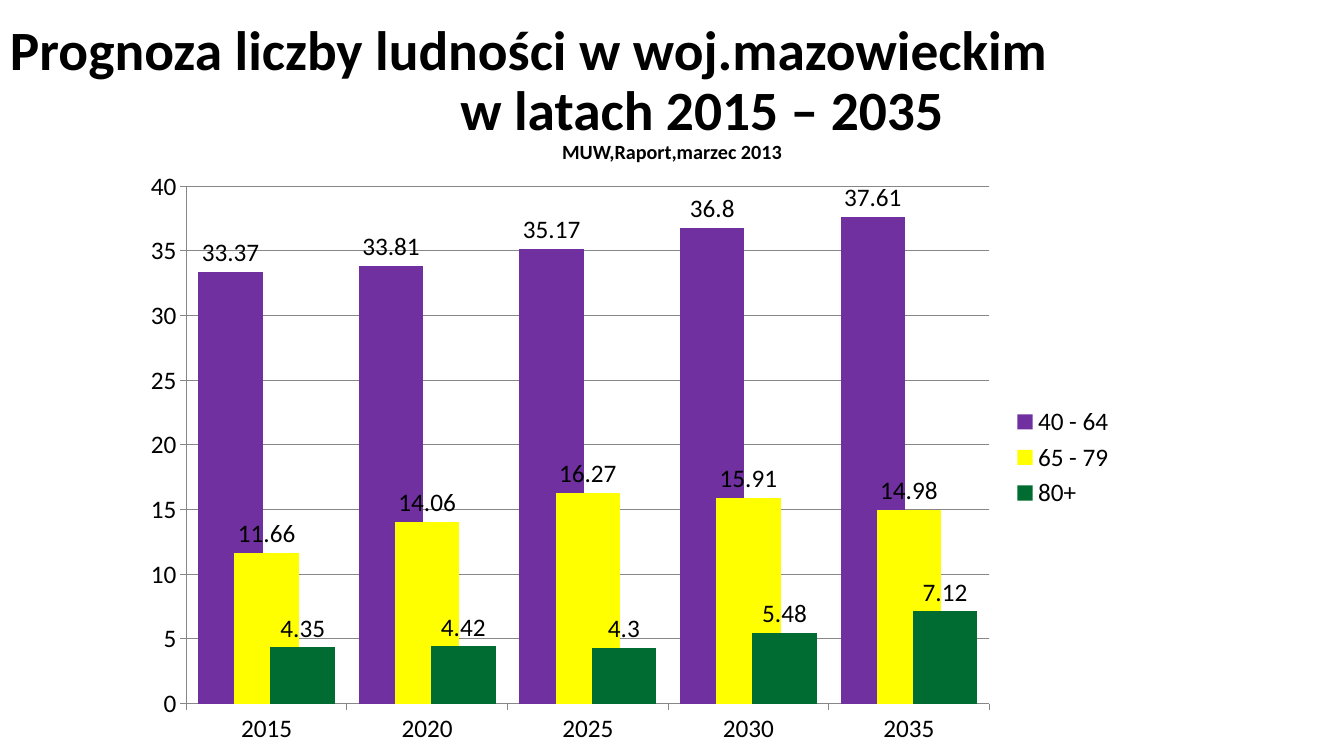
from pptx import Presentation
from pptx.chart.data import CategoryChartData
from pptx.dml.color import RGBColor
from pptx.enum.chart import XL_CHART_TYPE, XL_LABEL_POSITION, XL_LEGEND_POSITION, XL_TICK_MARK
from pptx.enum.text import MSO_ANCHOR, PP_ALIGN
from pptx.util import Pt

PX = 914400 / 100.8
FONT = "Calibri"
COLORS = {
    "text": "000000",
    "grid": "878787",
    "40 - 64": "7030A0",
    "65 - 79": "FFFF00",
    "80+": "006C31",
}


def px(length):
    return round(length * PX)


def color(name):
    return RGBColor.from_string(COLORS[name])


deck = Presentation()
deck.slide_width, deck.slide_height = px(1344), px(756)
page = deck.slides.add_slide(deck.slide_layouts[6])

title_lines = [
    ("Prognoza liczby ludności w woj.mazowieckim", 39.6, PP_ALIGN.LEFT, 0),
    ("w latach 2015 – 2035", 39.6, PP_ALIGN.CENTER, 60),
    ("MUW,Raport,marzec 2013", 14.4, PP_ALIGN.CENTER, 0),
]
title = page.shapes.add_textbox(px(0), px(30), px(1344), px(126))
frame = title.text_frame
frame.word_wrap = True
frame.vertical_anchor = MSO_ANCHOR.MIDDLE
frame.text = "\n".join(line[0] for line in title_lines)
for para, (_, size, alignment, indent) in zip(frame.paragraphs, title_lines):
    para.alignment = alignment
    para.line_spacing = 0.9
    para._p.get_or_add_pPr().set("marL", str(px(indent)))
    span = para.runs[0]
    span.font.name = FONT
    span.font.size = Pt(size)
    span.font.bold = True
    span.font.color.rgb = color("text")

forecast = CategoryChartData()
forecast.categories = ["2015", "2020", "2025", "2030", "2035"]
forecast.add_series("40 - 64", [33.37, 33.81, 35.17, 36.8, 37.61])
forecast.add_series("65 - 79", [11.66, 14.06, 16.27, 15.91, 14.98])
forecast.add_series("80+", [4.35, 4.42, 4.3, 5.48, 7.12])

chart = page.shapes.add_chart(
    XL_CHART_TYPE.COLUMN_CLUSTERED, px(131), px(159), px(994), px(597), forecast
).chart
chart.has_title = False
chart.font.name = FONT
chart.font.size = Pt(18)
chart.font.color.rgb = color("text")
chart.has_legend = True
chart.legend.position = XL_LEGEND_POSITION.RIGHT
chart.legend.include_in_layout = False

for axis in (chart.category_axis, chart.value_axis):
    axis.major_tick_mark = XL_TICK_MARK.OUTSIDE
    axis.minor_tick_mark = XL_TICK_MARK.NONE
    axis.format.line.color.rgb = color("grid")
    axis.format.line.width = Pt(0.75)
scale = chart.value_axis
scale.minimum_scale, scale.maximum_scale, scale.major_unit = 0, 40, 5
scale.has_major_gridlines = True
scale.major_gridlines.format.line.color.rgb = color("grid")
scale.major_gridlines.format.line.width = Pt(0.75)

plot = chart.plots[0]
plot.gap_width = 37
plot.overlap = 44
plot.vary_by_categories = False
for series in plot.series:
    series.invert_if_negative = False
    series.format.fill.solid()
    series.format.fill.fore_color.rgb = color(series.name)
    labels = series.data_labels
    labels.show_value = True
    labels.position = XL_LABEL_POSITION.OUTSIDE_END

deck.save("out.pptx")
